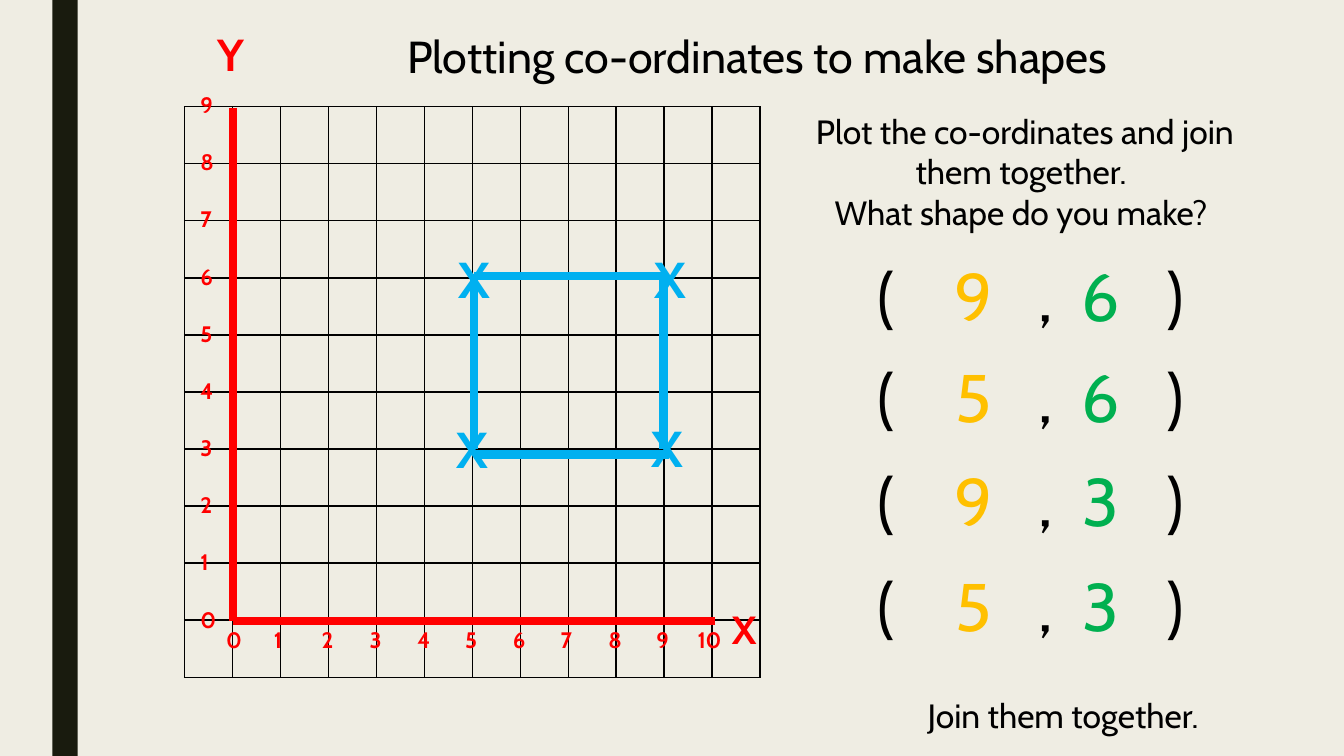
"""Build a slide on plotting co-ordinates to make shapes."""
from dataclasses import dataclass
from typing import Any

from lxml import etree
from pptx import Presentation
from pptx import util as u
from pptx.dml import color as dml
from pptx.enum import shapes, text
from pptx.oxml import ns

FONT = "Cabin"
BLACK, RED, BLUE, GOLD, GREEN = "000000", "FF0000", "00B0F0", "FFC000", "00B050"
PAPER, BAR = "EFEDE3", "191B0E"

COLUMNS, ROWS = 12, 10
GRID_LEFT, GRID_TOP, GRID_WIDTH, GRID_HEIGHT = 1.83, 1.06, 5.71, 5.66
X_STEP, Y_STEP = 0.474, 0.567
ORIGIN_X, ORIGIN_Y = 2.31, 6.16
TAB_STOPS = (1.03, 1.9, 2.61, 3.16, 3.9)


@dataclass
class Span:
    words: str
    color: str


@dataclass
class Label:
    paras: list[list[Span]]
    left: float
    top: float
    width: float
    height: float
    size: int
    bold: bool = False
    centred: bool = False
    wrap: bool = False
    tabs: tuple[float, ...] = ()


@dataclass
class Line:
    x1: float
    y1: float
    x2: float
    y2: float
    color: str


def rgb(value: str) -> dml.RGBColor:
    """Turn a hex string into a colour."""
    return dml.RGBColor.from_string(value)


def apply(target: Any, values: dict[str, Any]) -> None:
    """Set each named attribute on the target."""
    for name, value in values.items():
        setattr(target, name, value)


def add_tabs(para: Any, stops: tuple[float, ...]) -> None:
    """Give a paragraph centred tab stops."""
    tab_list = etree.SubElement(para._p.get_or_add_pPr(), ns.qn("a:tabLst"))
    for stop in stops:
        etree.SubElement(tab_list, ns.qn("a:tab"), pos=str(u.Inches(stop)), algn="ctr")


def draw_label(page: Any, label: Label) -> None:
    """Draw one text box."""
    box = page.shapes.add_textbox(
        *map(u.Inches, (label.left, label.top, label.width, label.height)))
    frame = box.text_frame
    apply(frame, {"word_wrap": label.wrap,
                  "auto_size": text.MSO_AUTO_SIZE.SHAPE_TO_FIT_TEXT})
    for index, spans in enumerate(label.paras):
        para = frame.add_paragraph() if index else frame.paragraphs[0]
        if label.centred:
            para.alignment = text.PP_ALIGN.CENTER
        if label.tabs:
            add_tabs(para, label.tabs)
        for item in spans:
            span = para.add_run()
            span.text = item.words
            apply(span.font, {"name": FONT, "size": u.Pt(label.size),
                              "bold": label.bold})
            span.font.color.rgb = rgb(item.color)


def draw_line(page: Any, line: Line) -> None:
    """Draw one thick straight line."""
    connector = page.shapes.add_connector(
        shapes.MSO_CONNECTOR.STRAIGHT,
        *map(u.Inches, (line.x1, line.y1, line.x2, line.y2)))
    connector.line.width = u.Pt(6)
    connector.line.color.rgb = rgb(line.color)
    etree.SubElement(connector._element.spPr, ns.qn("a:effectLst"))


def add_borders(cell: Any) -> None:
    """Outline a table cell in black."""
    props = cell._tc.get_or_add_tcPr()
    for index, side in enumerate(("lnL", "lnR", "lnT", "lnB")):
        border = etree.Element(ns.qn(f"a:{side}"), w=str(u.Pt(1)))
        fill = etree.SubElement(border, ns.qn("a:solidFill"))
        etree.SubElement(fill, ns.qn("a:srgbClr"), val=BLACK)
        props.insert(index, border)


def draw_grid(page: Any) -> None:
    """Draw the squared grid as an empty table."""
    table = page.shapes.add_table(
        ROWS, COLUMNS,
        *map(u.Inches, (GRID_LEFT, GRID_TOP, GRID_WIDTH, GRID_HEIGHT))).table
    apply(table, {"first_row": False, "horz_banding": False})
    for column in table.columns:
        column.width = u.Inches(GRID_WIDTH / COLUMNS)
    for row in table.rows:
        row.height = u.Inches(GRID_HEIGHT / ROWS)
    for cell in table.iter_cells():
        cell.fill.background()
        add_borders(cell)


def draw_bar(page: Any) -> None:
    """Draw the dark bar at the left edge."""
    bar = page.shapes.add_shape(
        shapes.MSO_SHAPE.RECTANGLE, *map(u.Inches, (0.52, 0, 0.25, 7.5)))
    bar.shadow.inherit = False
    bar.fill.solid()
    bar.fill.fore_color.rgb = rgb(BAR)
    bar.line.fill.background()


def axis_labels() -> list[Label]:
    """List the numbers along both axes."""
    labels = []
    for number in range(11):
        width = 0.46 if number > 9 else 0.33
        labels.append(Label([[Span(str(number), RED)]],
                            ORIGIN_X + number * X_STEP - width / 2, 6.16,
                            width, 0.37, 16, bold=True))
    for number in range(10):
        labels.append(Label([[Span(str(number), RED)]], 1.89,
                            5.96 - number * Y_STEP, 0.33, 0.37, 16, bold=True))
    return labels


def pair_label(x: int, y: int, top: float) -> Label:
    """Describe one bracketed co-ordinate pair."""
    spans = [Span("\t(", BLACK), Span(f"\t{x}", GOLD), Span("\t,", BLACK),
             Span(f"\t{y}", GREEN), Span("\t)", BLACK)]
    return Label([spans], 7.66, top, 5.13, 0.91, 48, wrap=True, tabs=TAB_STOPS)


def main() -> None:
    """Build and save the deck."""
    deck = Presentation()
    apply(deck, {"slide_width": u.Inches(13.33), "slide_height": u.Inches(7.5)})
    page = deck.slides.add_slide(deck.slide_layouts[6])
    page.background.fill.solid()
    page.background.fill.fore_color.rgb = rgb(PAPER)

    draw_bar(page)
    draw_grid(page)

    axes = [Line(7.09, ORIGIN_Y, ORIGIN_X, ORIGIN_Y, RED),
            Line(ORIGIN_X, 1.07, ORIGIN_X, ORIGIN_Y, RED)]
    sides = [Line(6.62, 2.74, 4.7, 2.74, BLUE), Line(4.7, 4.45, 4.7, 2.72, BLUE),
             Line(4.7, 4.51, 6.64, 4.51, BLUE), Line(6.58, 4.45, 6.58, 2.72, BLUE)]
    captions = [
        Label([[Span("Plotting co-ordinates to make shapes", BLACK)]],
              3.94, 0.24, 7.19, 0.64, 32),
        Label([[Span("Plot the co-ordinates and join them together. ", BLACK)],
               [Span("What shape do you make? ", BLACK)]],
              7.6, 1.05, 5.13, 1.31, 24, centred=True, wrap=True),
        Label([[Span("Join them together.", BLACK)]],
              7.98, 6.84, 5.13, 0.5, 24, centred=True, wrap=True),
        Label([[Span("X", RED)]], 7.16, 5.96, 0.41, 0.57, 28, bold=True),
        Label([[Span("Y", RED)]], 2.06, 0.22, 0.43, 0.64, 32, bold=True),
    ]
    pairs = [pair_label(*pair) for pair in
             ((9, 6, 2.47), (5, 6, 3.48), (9, 3, 4.51), (5, 3, 5.55))]
    marks = [Label([[Span("X", BLUE)]], left, top, 1.69, 0.71, 36,
                   bold=True, centred=True, wrap=True)
             for left, top in ((5.8, 2.41), (3.86, 2.41), (5.77, 4.09), (3.84, 4.1))]

    for axis in axes:
        draw_line(page, axis)
    for label in axis_labels() + captions + pairs + marks:
        draw_label(page, label)
    for side in sides:
        draw_line(page, side)
    deck.save("out.pptx")


if __name__ == "__main__":
    main()
